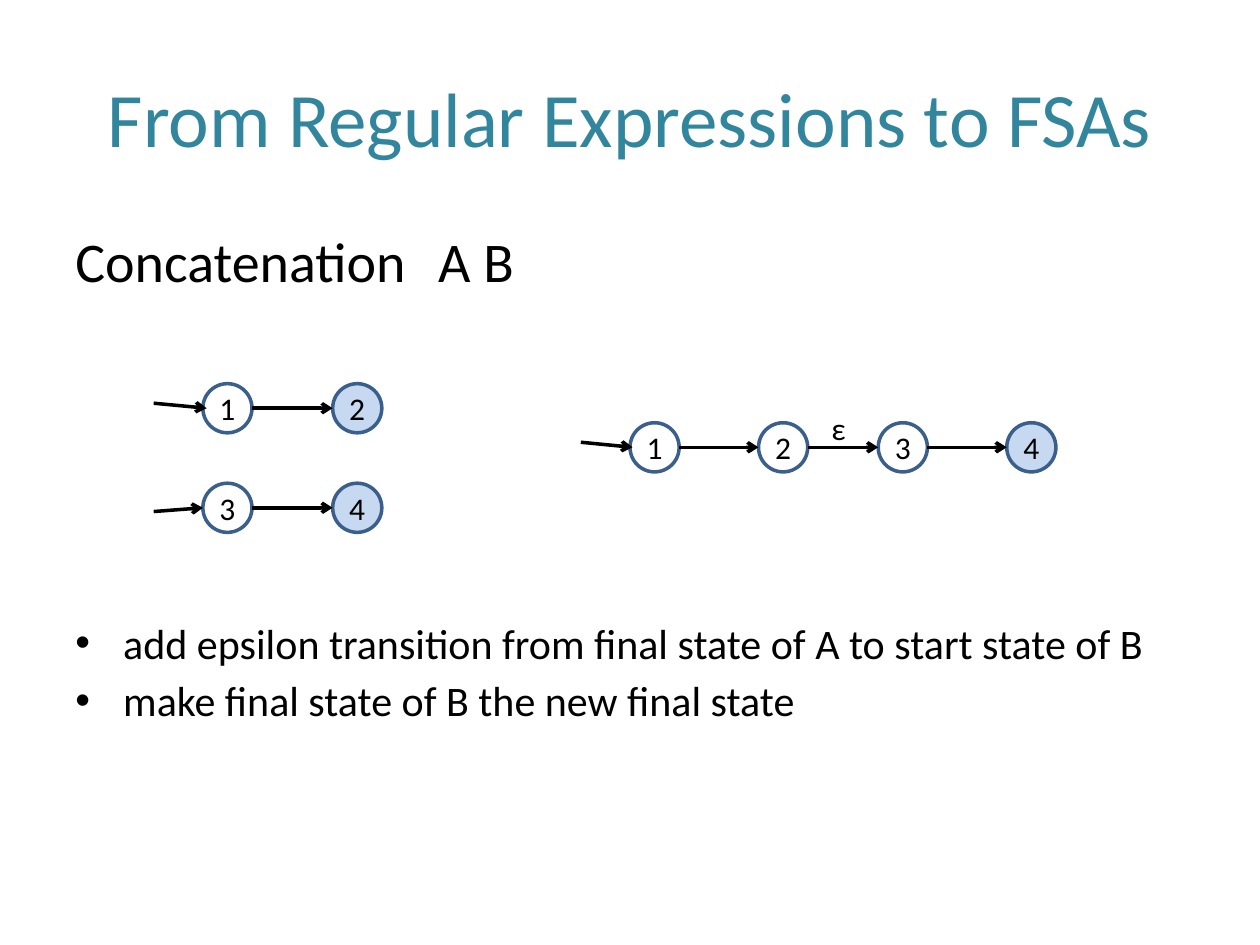
from dataclasses import dataclass
from itertools import pairwise

from lxml import etree
from pptx import Presentation
from pptx.dml.color import RGBColor
from pptx.enum.shapes import MSO_CONNECTOR, MSO_SHAPE
from pptx.enum.text import MSO_ANCHOR, PP_ALIGN
from pptx.oxml.ns import qn
from pptx.util import Inches, Pt

OVAL = MSO_SHAPE.OVAL
LINE = MSO_CONNECTOR.STRAIGHT
MIDDLE = MSO_ANCHOR.MIDDLE
CENTER, LEFT = PP_ALIGN.CENTER, PP_ALIGN.LEFT


@dataclass(frozen=True)
class Theme:
    font: str = "Calibri"
    title: RGBColor = RGBColor(0x31, 0x85, 0x9C)
    ink: RGBColor = RGBColor(0, 0, 0)
    ring: RGBColor = RGBColor(0x3A, 0x5F, 0x8C)
    final: RGBColor = RGBColor(0xC6, 0xD9, 0xF1)
    title_size: int = 44
    head_size: int = 32
    list_size: int = 24
    label_size: int = 18
    stroke: int = 2


@dataclass(frozen=True)
class State:
    name: str
    left: float
    final: bool = False


@dataclass(frozen=True)
class Chain:
    """States on one centre line; the entry arrow starts at height `entry`."""
    mid: float
    entry: float
    reach: float
    states: tuple[State, ...]


THEME = Theme()
SIZE = 0.39
INDENT = 0.38
TAB = 3.24
CHAINS = (
    Chain(3.24, 3.2, 0.03, (State("1", 1.61), State("2", 2.64, True))),
    Chain(4.03, 4.06, 0, (State("3", 1.61), State("4", 2.64, True))),
    Chain(3.55, 3.51, 0.02, (State("1", 5), State("2", 6.02),
                             State("3", 6.97), State("4", 7.99, True))),
)
BULLETS = (
    "add epsilon transition from final state of A to start state of B",
    "make final state of B the new final state",
)


def add_run(para, text: str, size: int, color: RGBColor = THEME.ink) -> None:
    run = para.add_run()
    run.text = text
    run.font.name = THEME.font
    run.font.size = Pt(size)
    run.font.color.rgb = color


def add_box(slide, left: float, top: float, width: float, height: float,
            wrap: bool = True):
    box = slide.shapes.add_textbox(
        Inches(left), Inches(top), Inches(width), Inches(height))
    box.text_frame.word_wrap = wrap
    return box.text_frame


def add_arrow(slide, x1: float, y1: float, x2: float, y2: float) -> None:
    link = slide.shapes.add_connector(
        LINE, Inches(x1), Inches(y1), Inches(x2), Inches(y2))
    link.line.color.rgb = THEME.ink
    link.line.width = Pt(THEME.stroke)
    etree.SubElement(link.line._get_or_add_ln(), qn("a:tailEnd"), type="arrow")
    etree.SubElement(link._element.spPr, qn("a:effectLst"))


def add_state(slide, state: State, mid: float) -> None:
    ring = slide.shapes.add_shape(
        OVAL, Inches(state.left), Inches(mid - SIZE / 2),
        Inches(SIZE), Inches(SIZE))
    ring.shadow.inherit = False
    if state.final:
        ring.fill.solid()
        ring.fill.fore_color.rgb = THEME.final
    else:
        ring.fill.background()
    ring.line.color.rgb = THEME.ring
    ring.line.width = Pt(THEME.stroke)
    frame = ring.text_frame
    frame.margin_left = frame.margin_right = 0
    frame.margin_top = frame.margin_bottom = 0
    frame.word_wrap = False
    frame.vertical_anchor = MIDDLE
    para = frame.paragraphs[0]
    para.alignment = CENTER
    add_run(para, state.name, THEME.label_size)


def add_chain(slide, chain: Chain) -> None:
    for state in chain.states:
        add_state(slide, state, chain.mid)
    first = chain.states[0].left
    add_arrow(slide, first - SIZE, chain.entry, first + chain.reach, chain.mid)
    for one, two in pairwise(chain.states):
        add_arrow(slide, one.left + SIZE, chain.mid, two.left, chain.mid)


def hang(para):
    """Give the paragraph a hanging indent and return its properties."""
    para.alignment = LEFT
    para.space_before = Pt(4)
    props = para._p.get_or_add_pPr()
    props.set("marL", str(Inches(INDENT)))
    props.set("indent", str(-Inches(INDENT)))
    return props


def add_title(slide) -> None:
    title = slide.shapes.title
    title.left, title.top = Inches(0.5), Inches(0.3)
    title.width, title.height = Inches(9), Inches(1.25)
    title.text_frame.vertical_anchor = MIDDLE
    para = title.text_frame.paragraphs[0]
    para.alignment = CENTER
    add_run(para, "From Regular Expressions to FSAs",
            THEME.title_size, THEME.title)


def add_head(slide) -> None:
    para = add_box(slide, 0.5, 1.75, 9, 0.65).paragraphs[0]
    tabs = etree.SubElement(hang(para), qn("a:tabLst"))
    etree.SubElement(tabs, qn("a:tab"), pos=str(Inches(TAB)), algn="l")
    add_run(para, "Concatenation \tA B", THEME.head_size)


def add_list(slide) -> None:
    frame = add_box(slide, 0.5, 4.85, 9, 1.85)
    for index, text in enumerate(BULLETS):
        para = frame.add_paragraph() if index else frame.paragraphs[0]
        props = hang(para)
        etree.SubElement(props, qn("a:buFont"), typeface="Arial")
        etree.SubElement(props, qn("a:buChar"), char="•")
        add_run(para, text, THEME.list_size)


def main() -> None:
    deck = Presentation()
    deck.slide_width, deck.slide_height = Inches(10), Inches(7.5)
    slide = deck.slides.add_slide(deck.slide_layouts[5])
    add_title(slide)
    add_head(slide)
    for chain in CHAINS:
        add_chain(slide, chain)
    label = add_box(slide, 6.5, 3.2, 0.32, 0.4, wrap=False)
    add_run(label.paragraphs[0], "ε", THEME.label_size)
    add_list(slide)
    deck.save("out.pptx")


if __name__ == "__main__":
    main()
